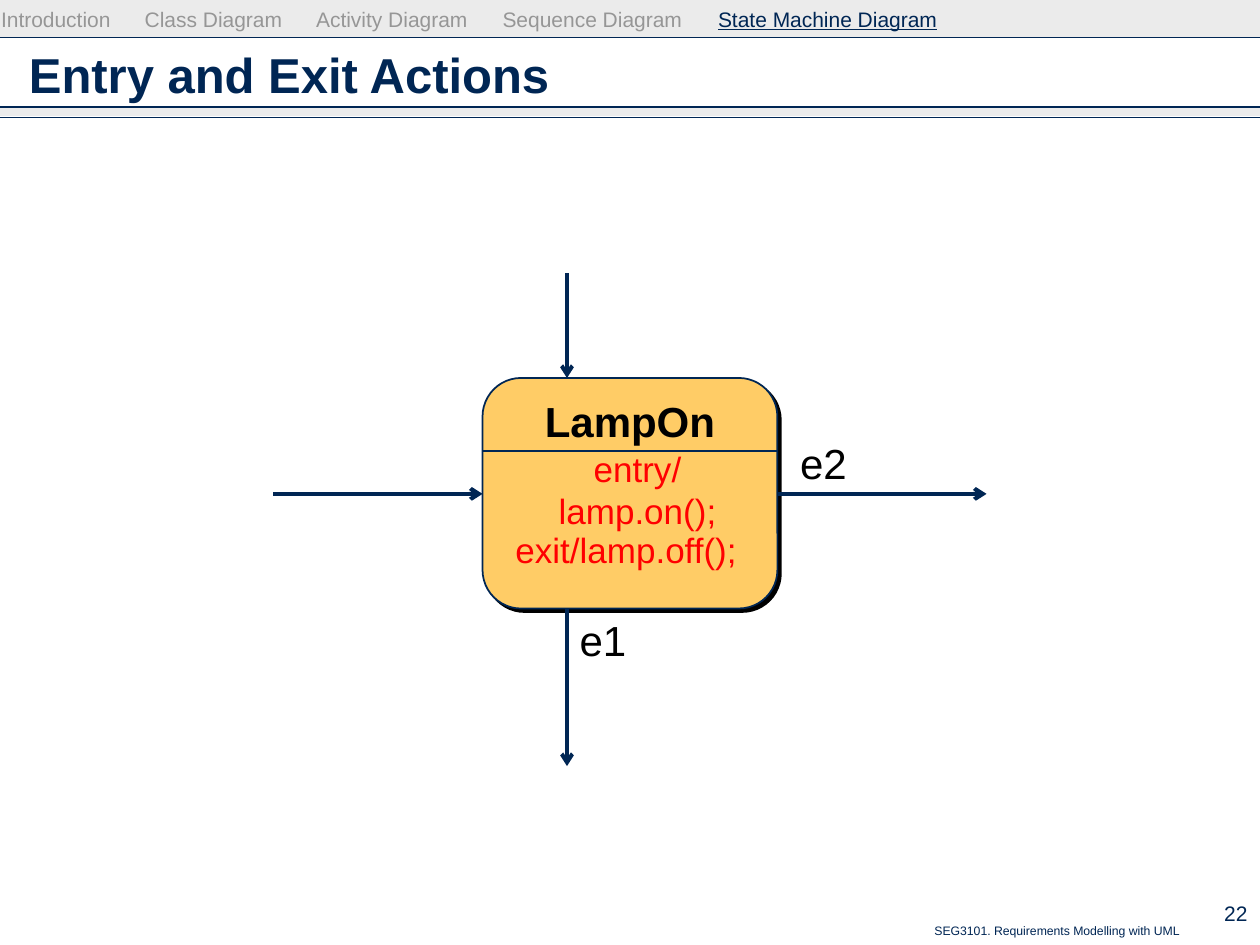
import pptx
import pptx.util
import pptx.dml.color
import pptx.enum.shapes
import pptx.enum.text
import pptx.oxml
import pptx.oxml.ns

Inches = pptx.util.Inches
ALIGN = pptx.enum.text.PP_ALIGN
ANCHOR = pptx.enum.text.MSO_ANCHOR
SHAPES = pptx.enum.shapes.MSO_SHAPE
NAVY, GRAY, BAND, AMBER = "002654", "969696", "CDCDCD", "FFCC66"
BLACK, RED = "000000", "FF0000"
SLIDE_WIDTH, SLIDE_HEIGHT = 10, 7.5


def paint(color_owner, color):
    """Colour a font, a line or a fill with a hex string."""
    if hasattr(color_owner, "solid"):
        color_owner.solid()
        color_owner = color_owner.fore_color
    else:
        color_owner = color_owner.color
    color_owner.rgb = pptx.dml.color.RGBColor.from_string(color)


def append_xml(parent, xml):
    namespace = pptx.oxml.ns.nsdecls("a")
    element = pptx.oxml.parse_xml(xml.replace("/>", f" {namespace}/>", 1)
                                  if xml.endswith("/>") and xml.count("<") == 1
                                  else xml.replace(">", f" {namespace}>", 1))
    parent.append(element)


def format_font(font, size, color, **values):
    settings = {"name": "Arial", "size": pptx.util.Pt(size), **values}
    for name, value in settings.items():
        setattr(font, name, value)
    paint(font, color)


def format_frame(frame, **values):
    settings = {"word_wrap": True, "auto_size": pptx.enum.text.MSO_AUTO_SIZE.NONE, **values}
    for name, value in settings.items():
        setattr(frame, name, value)


def add_text(slide, box, text, size, color, align=ALIGN.CENTER, **frame_values):
    shape = slide.shapes.add_textbox(*map(Inches, box))
    format_frame(shape.text_frame, **frame_values)
    paragraph = shape.text_frame.paragraphs[0]
    paragraph.alignment = align
    run = paragraph.add_run()
    run.text = text
    format_font(run.font, size, color)
    return shape


def add_line(slide, start, end, width, arrow=False):
    line = slide.shapes.add_connector(pptx.enum.shapes.MSO_CONNECTOR.STRAIGHT,
                                      *map(Inches, (*start, *end)))
    line.line.width = pptx.util.Pt(width)
    paint(line.line, NAVY)
    if arrow:
        append_xml(line.line._get_or_add_ln(), '<a:tailEnd type="arrow"/>')
    append_xml(line._element.spPr, "<a:effectLst/>")


def add_bands(slide):
    """Draw the two pale bands and the rules around the title."""
    for top, height in ((0, 0.3), (0.85, 0.07)):
        band = slide.shapes.add_shape(SHAPES.RECTANGLE,
                                      *map(Inches, (0, top, SLIDE_WIDTH, height)))
        band.shadow.inherit = False
        band.line.fill.background()
        paint(band.fill, BAND)
        color = band.fill._xPr.find(".//" + pptx.oxml.ns.qn("a:srgbClr"))
        append_xml(color, '<a:alpha val="40000"/>')
    for top in (0.3, 0.85, 0.93):
        add_line(slide, (0, top), (SLIDE_WIDTH, top), 0.75)


def add_navigation(slide, box):
    topics = ["Introduction", "Class Diagram", "Activity Diagram",
              "Sequence Diagram", "State Machine Diagram"]
    shape = slide.shapes.add_textbox(*map(Inches, box))
    format_frame(shape.text_frame, margin_top=0)
    paragraph = shape.text_frame.paragraphs[0]
    stops = "".join(f'<a:tab pos="{Inches(position)}" algn="l"/>'
                    for position in (1.14, 2.5, 3.98, 5.69))
    append_xml(paragraph._p.get_or_add_pPr(), f"<a:tabLst>{stops}</a:tabLst>")
    past = paragraph.add_run()
    past.text = "\t".join(topics[:-1]) + "\t"
    format_font(past.font, 12, GRAY)
    current = paragraph.add_run()
    current.text = topics[-1]
    format_font(current.font, 12, NAVY, underline=True)


def add_title(slide, box, text):
    title = slide.shapes.title
    for name, value in zip(("left", "top", "width", "height"), box):
        setattr(title, name, Inches(value))
    title.text = text
    format_frame(title.text_frame, vertical_anchor=ANCHOR.MIDDLE)
    paragraph = title.text_frame.paragraphs[0]
    paragraph.alignment = ALIGN.LEFT
    format_font(paragraph.runs[0].font, 28, NAVY, bold=True)


def add_state(slide, box):
    """Draw the state with its name, divider and two actions."""
    left, top, width, height = box
    state = slide.shapes.add_shape(SHAPES.ROUNDED_RECTANGLE, *map(Inches, box))
    state.adjustments[0] = 0.167
    paint(state.fill, AMBER)
    paint(state.line, NAVY)
    state.line.width = pptx.util.Pt(1)
    append_xml(state._element.spPr,
               f'<a:effectLst><a:outerShdw dist="{pptx.util.Pt(2.8)}" dir="2700000" '
               f'algn="ctr" rotWithShape="0"><a:srgbClr val="{BLACK}"/>'
               '</a:outerShdw></a:effectLst>')
    format_frame(state.text_frame, vertical_anchor=ANCHOR.TOP)
    paragraph = state.text_frame.paragraphs[0]
    paragraph.alignment = ALIGN.CENTER
    run = paragraph.add_run()
    run.text = "LampOn"
    format_font(run.font, 24, BLACK, bold=True)
    add_line(slide, (left, top + 0.58), (left + width, top + 0.58), 1)
    # The wide margins break the entry action after its slash.
    add_text(slide, (left + 0.16, top + 0.67, 2.14, 0.43), "entry/lamp.on();", 20, RED,
             vertical_anchor=ANCHOR.MIDDLE, margin_left=Inches(0.2), margin_right=Inches(0.2))
    add_text(slide, (left + 0.16, top + 1.15, 1.96, 0.43), "exit/lamp.off();", 20, RED,
             vertical_anchor=ANCHOR.MIDDLE, word_wrap=False)


def add_transitions(slide, box):
    """Draw the arrows into and out of the state in the given box."""
    left, top, width, height = box
    right, bottom = left + width, top + height
    column, row = left + 0.67, top + 0.92
    for start, end in (((left - 1.66, row), (left, row)),
                       ((column, bottom), (column, bottom + 1.25)),
                       ((right, row), (right + 1.66, row)),
                       ((column, top - 0.83), (column, top))):
        add_line(slide, start, end, 2.25, arrow=True)
    for text, x, y in (("e1", column, bottom), ("e2", right + 0.08, row - 0.5)):
        add_text(slide, (x, y, 0.57, 0.5), text, 24, BLACK,
                 vertical_anchor=ANCHOR.MIDDLE, word_wrap=False)


def add_footer(slide):
    add_text(slide, (3.25, 7.28, 6.21, 0.22), "SEG3101. Requirements Modelling with UML",
             7, NAVY, ALIGN.RIGHT)
    add_text(slide, (9.3, 7.08, 0.7, 0.34), "22", 12, NAVY, ALIGN.RIGHT,
             vertical_anchor=ANCHOR.MIDDLE)


def main():
    presentation = pptx.Presentation()
    presentation.slide_width = Inches(SLIDE_WIDTH)
    presentation.slide_height = Inches(SLIDE_HEIGHT)
    slide = presentation.slides.add_slide(presentation.slide_layouts[5])
    state_box = (3.83, 3, 2.34, 1.83)
    add_bands(slide)
    add_footer(slide)
    add_title(slide, (0.13, 0.26, 9.74, 0.66), "Entry and Exit Actions")
    add_state(slide, state_box)
    add_transitions(slide, state_box)
    add_navigation(slide, (-0.09, 0.05, 7.99, 0.25))
    presentation.save("out.pptx")


if __name__ == "__main__":
    main()
